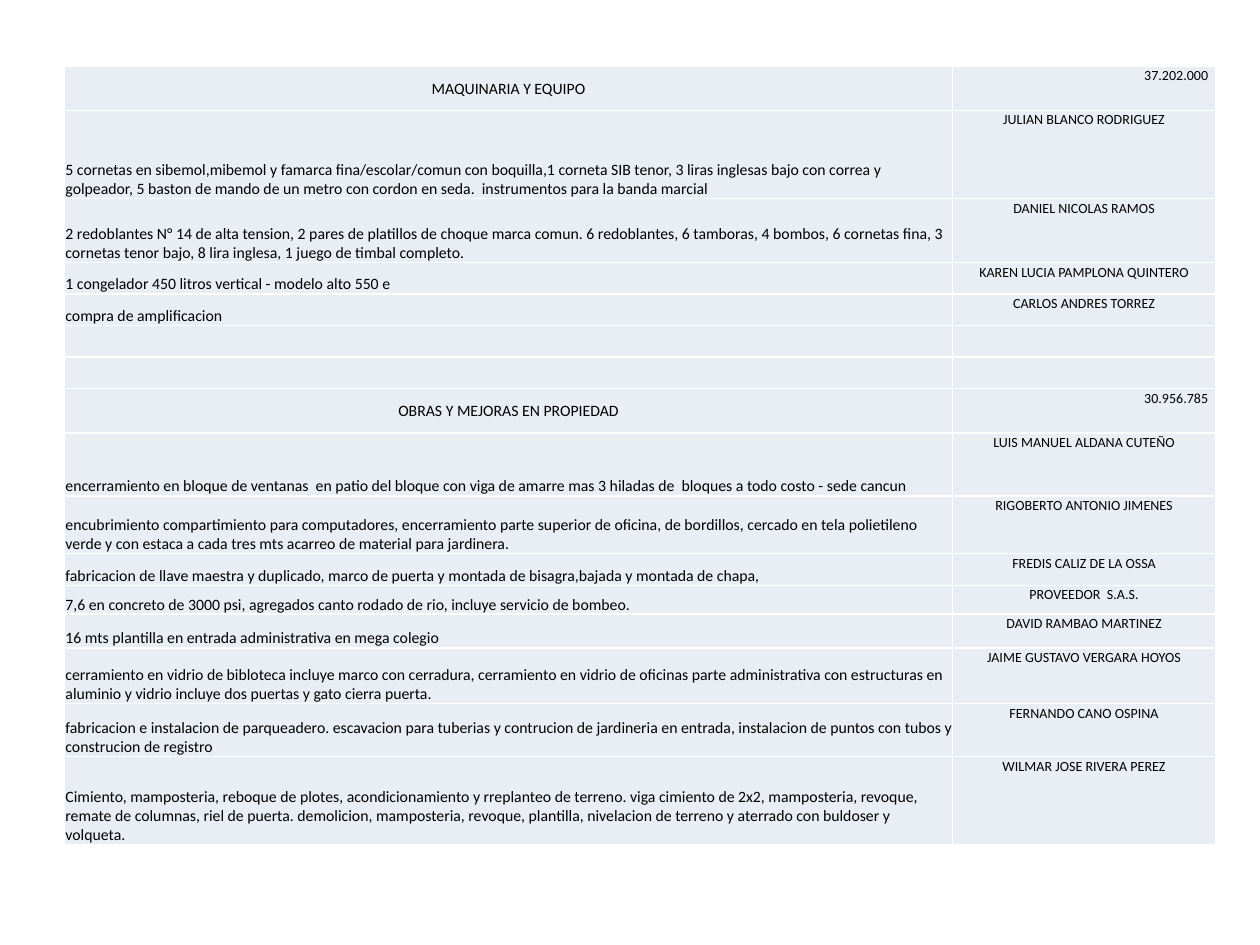
from dataclasses import dataclass

from lxml import etree
from pptx import Presentation
from pptx import util as u
from pptx.dml.color import RGBColor
from pptx.enum import text as t
from pptx.oxml.ns import qn

COLORS = {"cell": "E9EDF4", "border": "FFFFFF", "text": "000000"}
FONT = "Calibri"
WIDTH, HEIGHT = u.Inches(10), u.Inches(7.5)
LEFT, TOP = 0.051, 0.07           # shares of the slide's size
COLUMNS = (0.705, 0.209)          # shares of the slide's width


@dataclass(frozen=True)
class Entry:
    height: float                 # inches
    concept: str = ""
    payee: str = ""
    heading: bool = False         # heading rows hold an amount on the right


ENTRIES = [
    Entry(0.35, "MAQUINARIA Y EQUIPO", "37.202.000", True),
    Entry(0.7, "5 cornetas en sibemol,mibemol y famarca fina/escolar/comun con boquilla,"
          "1 corneta SIB tenor, 3 liras inglesas bajo con correa y golpeador, 5 baston de mando "
          "de un metro con cordon en seda.  instrumentos para la banda marcial",
          "JULIAN BLANCO RODRIGUEZ"),
    Entry(0.51, "2 redoblantes N° 14 de alta tension, 2 pares de platillos de choque marca "
          "comun. 6 redoblantes, 6 tamboras, 4 bombos, 6 cornetas fina, 3 cornetas tenor bajo, "
          "8 lira inglesa, 1 juego de timbal completo.", "DANIEL NICOLAS RAMOS"),
    Entry(0.25, "1 congelador 450 litros vertical - modelo alto 550 e",
          "KAREN LUCIA PAMPLONA QUINTERO"),
    Entry(0.25, "compra de amplificacion", "CARLOS ANDRES TORREZ"),
    Entry(0.25),
    Entry(0.25),
    Entry(0.35, "OBRAS Y MEJORAS EN PROPIEDAD", "30.956.785", True),
    Entry(0.5, "encerramiento en bloque de ventanas  en patio del bloque con viga de amarre "
          "mas 3 hiladas de  bloques a todo costo - sede cancun", "LUIS MANUEL ALDANA CUTEÑO"),
    Entry(0.46, "encubrimiento compartimiento para computadores, encerramiento parte superior "
          "de oficina, de bordillos, cercado en tela polietileno verde y con estaca a cada tres "
          "mts acarreo de material para jardinera.", "RIGOBERTO ANTONIO JIMENES"),
    Entry(0.25, "fabricacion de llave maestra y duplicado, marco de puerta y montada de "
          "bisagra,bajada y montada de chapa,", "FREDIS CALIZ DE LA OSSA"),
    Entry(0.23, "7,6 en concreto de 3000 psi, agregados canto rodado de rio, incluye servicio "
          "de bombeo.", "PROVEEDOR  S.A.S."),
    Entry(0.27, "16 mts plantilla en entrada administrativa en mega colegio",
          "DAVID RAMBAO MARTINEZ"),
    Entry(0.44, "cerramiento en vidrio de bibloteca incluye marco con cerradura, cerramiento "
          "en vidrio de oficinas parte administrativa con estructuras en aluminio y vidrio "
          "incluye dos puertas y gato cierra puerta.", "JAIME GUSTAVO VERGARA HOYOS"),
    Entry(0.42, "fabricacion e instalacion de parqueadero. escavacion para tuberias y "
          "contrucion de jardineria en entrada, instalacion de puntos con tubos y construcion "
          "de registro", "FERNANDO CANO OSPINA"),
    Entry(0.7, "Cimiento, mamposteria, reboque de plotes, acondicionamiento y rreplanteo de "
          "terreno. viga cimiento de 2x2, mamposteria, revoque, remate de columnas, riel de "
          "puerta. demolicion, mamposteria, revoque, plantilla, nivelacion de terreno y aterrado "
          "con buldoser y volqueta.", "WILMAR JOSE RIVERA PEREZ"),
]


def write(cell, text: str, *, size: float, align, anchor, right: float = 0.01) -> None:
    """Put formatted text in a cell; an empty cell only gets its text size."""
    cell.margin_left = cell.margin_top = u.Inches(0.01)
    cell.margin_right, cell.margin_bottom = u.Inches(right), 0
    cell.vertical_anchor = anchor
    paragraph = cell.text_frame.paragraphs[0]
    paragraph.alignment = align
    if not text:
        etree.SubElement(paragraph._p, qn("a:endParaRPr"), sz=str(int(size * 100)))
        return
    run = paragraph.add_run()
    run.text = text
    run.font.name, run.font.size = FONT, u.Pt(size)
    run.font.bold = False
    run.font.color.rgb = RGBColor.from_string(COLORS["text"])


def paint(cell) -> None:
    """Draw the four borders, then the fill that must follow them."""
    properties = cell._tc.get_or_add_tcPr()
    for side in ("a:lnL", "a:lnR", "a:lnT", "a:lnB"):
        line = etree.SubElement(properties, qn(side), w=str(u.Pt(1)))
        fill = etree.SubElement(line, qn("a:solidFill"))
        etree.SubElement(fill, qn("a:srgbClr"), val=COLORS["border"])
    cell.fill.solid()
    cell.fill.fore_color.rgb = RGBColor.from_string(COLORS["cell"])


def fill_row(table, index: int, entry: Entry) -> None:
    table.rows[index].height = u.Inches(entry.height)
    concept, payee = table.cell(index, 0), table.cell(index, 1)
    align, anchor = t.PP_ALIGN, t.MSO_ANCHOR
    if entry.heading:
        write(concept, entry.concept, size=9, align=align.CENTER, anchor=anchor.MIDDLE)
        write(payee, entry.payee, size=8, align=align.RIGHT, anchor=anchor.TOP, right=0.06)
    else:
        write(concept, entry.concept, size=9, align=align.LEFT, anchor=anchor.BOTTOM)
        write(payee, entry.payee, size=8, align=align.CENTER, anchor=anchor.TOP)
    paint(concept)
    paint(payee)


def main() -> None:
    deck = Presentation()
    deck.slide_width, deck.slide_height = WIDTH, HEIGHT
    slide = deck.slides.add_slide(deck.slide_layouts[6])

    # Expense table
    expenses = slide.shapes.add_table(
        len(ENTRIES), len(COLUMNS), int(LEFT * WIDTH), int(TOP * HEIGHT),
        int(sum(COLUMNS) * WIDTH), u.Inches(sum(entry.height for entry in ENTRIES))).table
    expenses.first_row = expenses.horz_banding = False
    for column, share in zip(expenses.columns, COLUMNS):
        column.width = int(share * WIDTH)
    for index, entry in enumerate(ENTRIES):
        fill_row(expenses, index, entry)

    deck.save("out.pptx")


if __name__ == "__main__":
    main()
